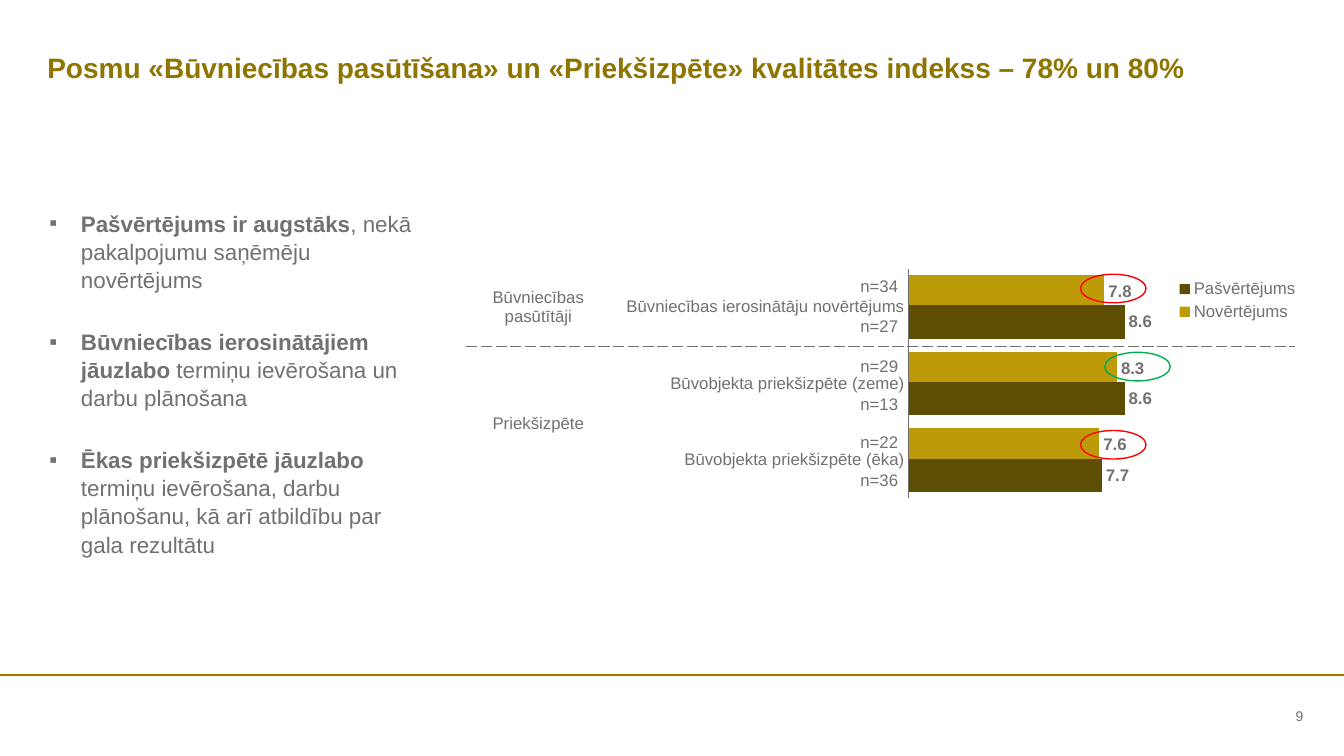
from lxml import etree
from pptx import Presentation
from pptx.chart import data as cd
from pptx.dml.color import RGBColor
from pptx.enum import chart as ec, shapes, text
from pptx.oxml import parse_xml
from pptx.oxml.ns import nsdecls, qn
from pptx.util import Pt

FONT, GREY, WHITE = "Arial", "717171", "FFFFFF"
GOLD, RED, GREEN = "8E7500", "FF0000", "00B050"

TITLE = "Posmu «Būvniecības pasūtīšana» un «Priekšizpēte» kvalitātes indekss – 78% un 80%"
POINTS = [
    ("Pašvērtējums ir augstāks", ", nekā pakalpojumu saņēmēju novērtējums"),
    ("Būvniecības ierosinātājiem jāuzlabo", " termiņu ievērošana un darbu plānošana"),
    ("Ēkas priekšizpētē jāuzlabo",
     " termiņu ievērošana, darbu plānošanu, kā arī atbildību par gala rezultātu"),
]
STAGES = [("Būvniecības pasūtītāji", 0, 1), ("Priekšizpēte", 2, 5)]
COUNTS = [34, 27, 29, 13, 22, 36]
COLS, ROW = (102.24, 206.64, 282.24), 27.25
CATS = ["Būvniecības ierosinātāju novērtējums", "Būvobjekta priekšizpēte (zeme)",
        "Būvobjekta priekšizpēte (ēka)"]
SERIES = [("Novērtējums", (7.8, 8.3, 7.6), "BD9B08"),
          ("Pašvērtējums", (8.6, 8.6, 7.7), "5E4E04")]
PLOT, LEGEND = (0.426, 0.022, 0.358, 0.599), (0.8, 0.04, 0.19, 0.13)
RINGS = [(771.8, RED), (789.1, GREEN), (771.8, RED)]


def color(code):
    return RGBColor.from_string(code)


def style(font, size, code=GREY, bold=False):
    font.name, font.size, font.bold = FONT, Pt(size), bold
    font.color.rgb = color(code)


def add_box(left, top, width, height):
    """Add a wrapping text box without insets."""
    box = slide.shapes.add_textbox(Pt(left), Pt(top), Pt(width), Pt(height))
    frame = box.text_frame
    frame.word_wrap = True
    frame.margin_left = frame.margin_right = frame.margin_top = frame.margin_bottom = 0
    return frame


def add_line(words, left, top, width, height, size, code=GREY, bold=False):
    frame = add_box(left, top, width, height)
    frame.text = words
    style(frame.paragraphs[0].runs[0].font, size, code, bold)
    return frame


def add_points():
    frame = add_box(35.3, 149, 267, 242.6)
    for i, parts in enumerate(POINTS):
        para = frame.add_paragraph() if i else frame.paragraphs[0]
        props = para._p.get_or_add_pPr()
        props.set("marL", str(Pt(22.5)))
        props.set("indent", str(Pt(-22.5)))
        etree.SubElement(props, qn("a:buFont")).set("typeface", FONT)
        etree.SubElement(props, qn("a:buChar")).set("char", "▪")
        para.line_spacing = 1.05
        if i:
            para.space_before = Pt(24)
        for j, words in enumerate(parts):
            run = para.add_run()
            run.text = words
            style(run.font, 16, bold=j == 0)


def set_edge(cell, tag):
    """Give one side of a cell the dashed grey border."""
    cell._tc.get_or_add_tcPr().insert(0, parse_xml(
        f'<a:{tag} {nsdecls("a")} w="9525"><a:solidFill><a:srgbClr val="{GREY}"/>'
        f'</a:solidFill><a:prstDash val="sysDash"/></a:{tag}>'))


def fill_cell(cell, words, align):
    cell.text = words
    para = cell.text_frame.paragraphs[0]
    para.alignment = align
    style(para.runs[0].font, 12)


def add_grid():
    frame = slide.shapes.add_table(len(COUNTS), len(COLS), Pt(333.4), Pt(190.8),
                                   Pt(sum(COLS)), Pt(ROW * len(COUNTS)))
    grid = frame.table
    grid.first_row = grid.horz_banding = False
    for col, width in zip(grid.columns, COLS):
        col.width = Pt(width)
    for row in grid.rows:
        row.height = Pt(ROW)
        for cell in row.cells:
            cell.fill.background()
            cell.margin_left = cell.margin_right = cell.margin_top = Pt(0.72)
            cell.margin_bottom = 0
            cell.vertical_anchor = text.MSO_ANCHOR.MIDDLE
            cell.text_frame.paragraphs[0].font.size = Pt(12)
    for i, count in enumerate(COUNTS):
        fill_cell(grid.cell(i, 1), f"n={count}", text.PP_ALIGN.RIGHT)
    for name, first, last in STAGES:
        grid.cell(first, 0).merge(grid.cell(last, 0))
        fill_cell(grid.cell(first, 0), name, text.PP_ALIGN.CENTER)
    for i in range(0, len(COUNTS), 2):
        grid.cell(i, 2).merge(grid.cell(i + 1, 2))
    for j in range(len(COLS)):
        set_edge(grid.cell(1, j), "lnB")
        set_edge(grid.cell(2, j), "lnT")
    for j in (0, 2):
        set_edge(grid.cell(0, j), "lnB")


def layout(spot, inner=False):
    """Make a manual chart layout from x, y, width and height shares."""
    target = '<c:layoutTarget val="inner"/>' if inner else ""
    modes = '<c:xMode val="edge"/><c:yMode val="edge"/>'
    sizes = "".join(f'<c:{k} val="{v}"/>' for k, v in zip("xywh", spot))
    return parse_xml(f'<c:layout {nsdecls("c")}><c:manualLayout>{target}{modes}{sizes}'
                     '</c:manualLayout></c:layout>')


def add_bars():
    data = cd.CategoryChartData()
    data.categories = CATS
    for name, vals, _ in SERIES:
        data.add_series(name, vals)
    chart = slide.shapes.add_chart(ec.XL_CHART_TYPE.BAR_CLUSTERED, Pt(435.6), Pt(185.8),
                                   Pt(501.1), Pt(274.3), data).chart
    style(chart.font, 12)
    chart.has_title = False
    chart._chartSpace.find(qn("c:chart")).addnext(parse_xml(
        f'<c:spPr {nsdecls("c", "a")}><a:noFill/><a:ln><a:noFill/></a:ln></c:spPr>'))

    cat, val = chart.category_axis, chart.value_axis
    cat.reverse_order = True
    cat.major_tick_mark = ec.XL_TICK_MARK.NONE
    cat.format.line.color.rgb = color(GREY)
    cat.format.line.width = Pt(0.75)
    style(cat.tick_labels.font, 12)
    val.minimum_scale, val.maximum_scale = 0, 10
    val.has_major_gridlines = val.visible = False

    plot = chart.plots[0]
    plot.gap_width, plot.overlap, plot.vary_by_categories = 40, 9, False
    for bars, (_, _, code) in zip(plot.series, SERIES):
        bars.format.fill.solid()
        bars.format.fill.fore_color.rgb = color(code)
        labels = bars.data_labels
        labels.show_value = True
        labels.position = ec.XL_LABEL_POSITION.OUTSIDE_END
        labels.number_format, labels.number_format_is_linked = "#,##0.0", False
        style(labels.font, 12, bold=True)

    chart.has_legend = True
    key = chart.legend
    key.position, key.include_in_layout = ec.XL_LEGEND_POSITION.RIGHT, False
    style(key.font, 12)
    for old in key._element.findall(qn("c:layout")):
        key._element.remove(old)
    key._element.find(qn("c:legendPos")).addnext(layout(LEGEND))
    area = chart._chartSpace.find(qn("c:chart")).find(qn("c:plotArea"))
    for old in area.findall(qn("c:layout")):
        area.remove(old)
    area.insert(0, layout(PLOT, True))


def add_rings():
    for i, (left, code) in enumerate(RINGS):
        ring = slide.shapes.add_shape(shapes.MSO_SHAPE.OVAL, Pt(left), Pt(195.9 + 55.8 * i),
                                      Pt(46.8), Pt(20.4))
        ring.shadow.inherit = False
        ring.fill.background()
        ring.line.color.rgb = color(code)
        ring.line.width = Pt(1)


def add_rule():
    rule = slide.shapes.add_connector(shapes.MSO_CONNECTOR.STRAIGHT,
                                      0, Pt(482.1), Pt(960), Pt(482.1))
    rule.line.color.rgb = color("A07800")
    rule.line.width = Pt(1.5)
    etree.SubElement(rule._element.spPr, qn("a:effectLst"))


deck = Presentation()
deck.slide_width, deck.slide_height = Pt(960), Pt(540)
slide = deck.slides.add_slide(deck.slide_layouts[6])
add_rule()
add_line(TITLE, 33.8, 36, 902.9, 31.7, 20, GOLD, True)
add_grid()
add_bars()
add_points()
add_rings()
number = add_line("9", 854.6, 503.3, 76.3, 15.8, 10)
number.vertical_anchor = text.MSO_ANCHOR.MIDDLE
number.paragraphs[0].alignment = text.PP_ALIGN.RIGHT
deck.save("out.pptx")
